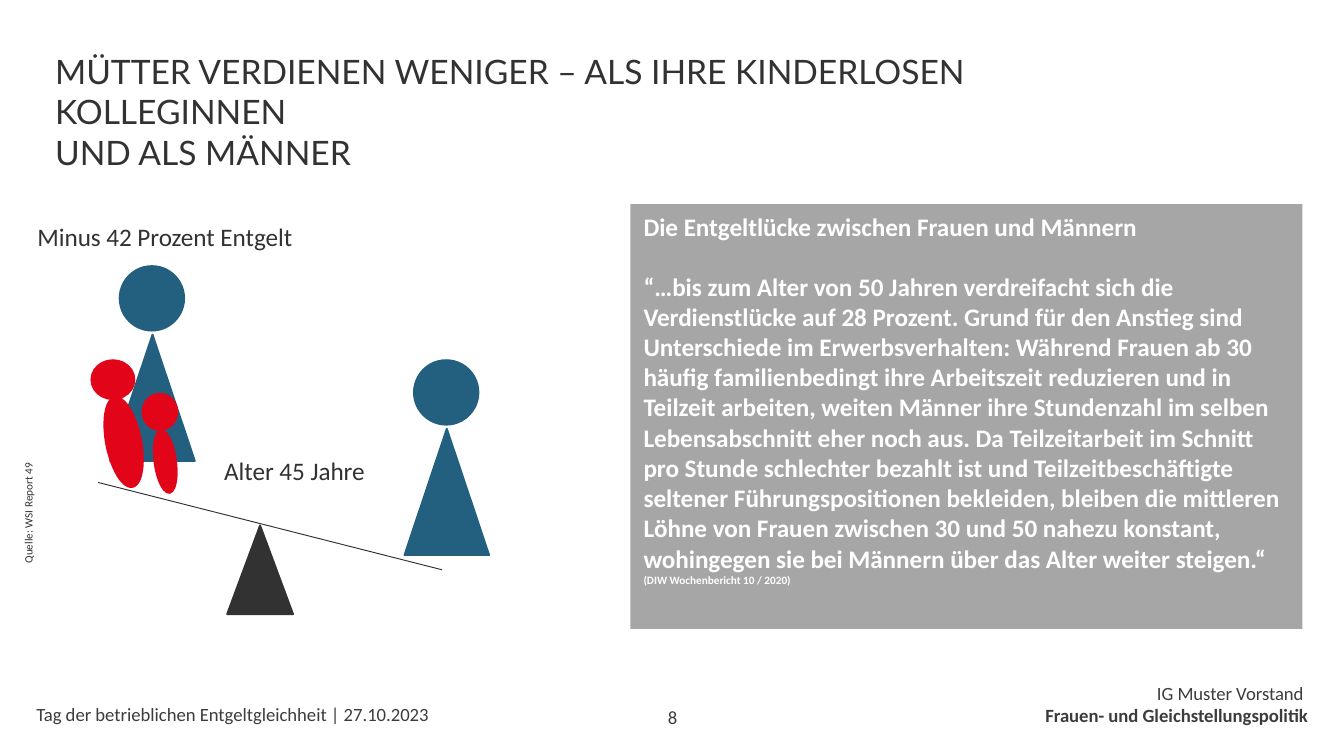
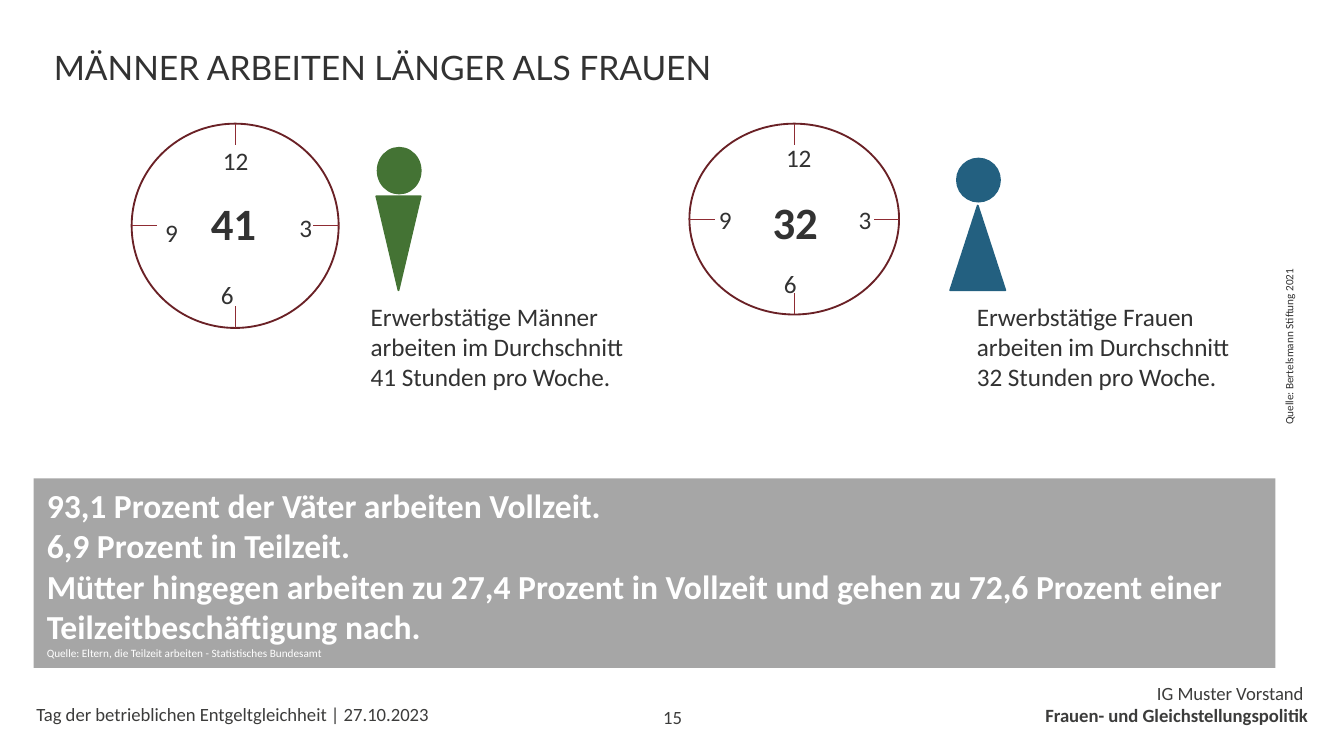
from lxml.etree import SubElement
from pptx import Presentation
from pptx.dml.color import RGBColor
from pptx.enum.shapes import MSO_CONNECTOR, MSO_SHAPE
from pptx.enum.text import MSO_ANCHOR, MSO_AUTO_SIZE, PP_ALIGN
from pptx.oxml.ns import qn
from pptx.util import Inches, Pt

COLORS = {
    "text": "323232", "footer": "3C3C3B", "white": "FFFFFF", "panel": "A6A6A6",
    "blue": "236080", "red": "E2051A", "green": "447334",
    "clock": "6A2126", "tick": "8F2C33",
}
LEFT, CENTER, RIGHT = PP_ALIGN.LEFT, PP_ALIGN.CENTER, PP_ALIGN.RIGHT
TOP, BOTTOM = MSO_ANCHOR.TOP, MSO_ANCHOR.BOTTOM
OVAL, TRIANGLE, RECT = MSO_SHAPE.OVAL, MSO_SHAPE.ISOSCELES_TRIANGLE, MSO_SHAPE.RECTANGLE

FOOTER_LEFT = ["Tag der betrieblichen Entgeltgleichheit | 27.10.2023"]
FOOTER_RIGHT = ["IG Muster Vorstand ", ("Frauen- und Gleichstellungspolitik", {"bold": True})]

PAY_TITLE = ["MÜTTER VERDIENEN WENIGER – ALS IHRE KINDERLOSEN KOLLEGINNEN", "UND ALS MÄNNER"]
PAY_PANEL = [
    "Die Entgeltlücke zwischen Frauen und Männern",
    ("“…bis zum Alter von 50 Jahren verdreifacht sich die Verdienstlücke auf 28 Prozent. "
     "Grund für den Anstieg sind Unterschiede im Erwerbsverhalten: Während Frauen ab 30 "
     "häufig familienbedingt ihre Arbeitszeit reduzieren und in Teilzeit arbeiten, weiten "
     "Männer ihre Stundenzahl im selben Lebensabschnitt eher noch aus. Da Teilzeitarbeit im "
     "Schnitt pro Stunde schlechter bezahlt ist und Teilzeitbeschäftigte seltener "
     "Führungspositionen bekleiden, bleiben die mittleren Löhne von Frauen zwischen 30 und 50 "
     "nahezu konstant, wohingegen sie bei Männern über das Alter weiter steigen.“",
     {"before": 16}),
    ("(DIW Wochenbericht 10 / 2020)", {"size": 6}),
]
PAY_LABELS = [
    ("Minus 42 Prozent Entgelt", (0.18, 1.6, 2.28, 0.33)),
    ("Alter 45 Jahre", (1.57, 3.34, 1.56, 0.33)),
]
MOTHER = [
    (OVAL, (0.89, 1.98, 0.48, 0.48), "blue", 0),
    (TRIANGLE, (0.82, 2.49, 0.63, 0.94), "blue", 0),
]
CHILDREN = [
    (OVAL, (1.06, 2.93, 0.26, 0.27), "red", 0),
    (OVAL, (1.15, 3.2, 0.16, 0.47), "red", 352.2),
    (OVAL, (0.68, 2.68, 0.32, 0.29), "red", 0),
    (OVAL, (0.79, 2.95, 0.26, 0.68), "red", 348.8),
]
COLLEAGUE_OFFSET = (2.19, 0.7)
SEESAW_BEAM = (0.73, 3.59, 3.29, 4.24)
SEESAW_BASE = (TRIANGLE, (1.69, 3.91, 0.49, 0.66), "text", 0)

HOURS_TITLE = ["MÄNNER ARBEITEN LÄNGER ALS FRAUEN"]
HOURS_PANEL = [
    "93,1 Prozent der Väter arbeiten Vollzeit.",
    "6,9 Prozent in Teilzeit.",
    "Mütter hingegen arbeiten zu 27,4 Prozent in Vollzeit und gehen zu 72,6 Prozent einer "
    "Teilzeitbeschäftigung nach.",
    ("Quelle: Eltern, die Teilzeit arbeiten - Statistisches Bundesamt",
     {"size": 6, "bold": False}),
]
WORKERS = [
    {
        "group": "Männer", "hours": "41", "caption_left": 2.66,
        "dial": (0.98, 0.92, 1.54, 1.52),
        "hours_box": (1.47, 1.41, 0.61, 0.5),
        "digits": {"12": (1.56, 1.03, 0.41, 0.33), "3": (2.13, 1.53, 0.25, 0.25),
                   "6": (1.64, 2.03, 0.1, 0.33), "9": (1.13, 1.57, 0.38, 0.25)},
        "figure": [(OVAL, (2.81, 1.1, 0.32, 0.34), "green", 0),
                   (TRIANGLE, (2.8, 1.46, 0.33, 0.7), "green", 180)],
    },
    {
        "group": "Frauen", "hours": "32", "caption_left": 7.17,
        "dial": (5.13, 0.92, 1.56, 1.42),
        "hours_box": (5.65, 1.4, 0.8, 0.5),
        "digits": {"12": (5.75, 1.01, 0.45, 0.33), "3": (6.29, 1.47, 0.27, 0.33),
                   "6": (5.8, 1.95, 0.16, 0.24), "9": (5.25, 1.47, 0.32, 0.33)},
        "figure": [(OVAL, (7.12, 1.18, 0.32, 0.32), "blue", 0),
                   (TRIANGLE, (7.07, 1.53, 0.41, 0.63), "blue", 0)],
    },
]
TICK_X, TICK_Y = 0.19, 0.16


def rgb(name):
    return RGBColor.from_string(COLORS[name])


def write(tf, paras, size=13.5, color="text", font="Calibri", bold=False,
          align=LEFT, anchor=TOP, inset=(0.1, 0.05)):
    tf.word_wrap = True
    tf.auto_size = MSO_AUTO_SIZE.NONE
    tf.vertical_anchor = anchor
    tf.margin_left = tf.margin_right = Inches(inset[0])
    tf.margin_top = tf.margin_bottom = Inches(inset[1])
    for i, para in enumerate(paras):
        text, own = (para, {}) if isinstance(para, str) else para
        p = tf.add_paragraph() if i else tf.paragraphs[0]
        p.alignment = align
        p.space_before = Pt(own.get("before", 0))
        r = p.add_run()
        r.text = text
        r.font.name = font
        r.font.size = Pt(own.get("size", size))
        r.font.bold = own.get("bold", bold)
        r.font.color.rgb = rgb(color)


def add_text(shapes, paras, box, rotation=0, **fmt):
    sp = shapes.add_textbox(*map(Inches, box))
    sp.rotation = rotation
    write(sp.text_frame, paras, **fmt)


def add_shape(shapes, kind, box, fill, rotation=0, line=None):
    sp = shapes.add_shape(kind, *map(Inches, box))
    sp.shadow.inherit = False
    sp.rotation = rotation
    sp.fill.solid()
    sp.fill.fore_color.rgb = rgb(fill)
    if line:
        sp.line.color.rgb = rgb(line)
        sp.line.width = Pt(1)
    else:
        sp.line.fill.background()
    return sp


def add_figure(shapes, parts, dx=0, dy=0):
    for kind, (x, y, w, h), color, rotation in parts:
        add_shape(shapes, kind, (x + dx, y + dy, w, h), color, rotation, line=color)


def add_line(shapes, ends, color):
    cn = shapes.add_connector(MSO_CONNECTOR.STRAIGHT, *map(Inches, ends))
    cn.line.color.rgb = rgb(color)
    cn.line.width = Pt(0.5)
    SubElement(cn._element.spPr, qn("a:effectLst"))


def add_panel(s, paras, box, size):
    sp = add_shape(s.shapes, RECT, box, "panel")
    write(sp.text_frame, paras, size=size, color="white", bold=True)


def add_source(s, text, box):
    add_text(s.shapes, [text], box, rotation=270, size=6)


def add_clock(shapes, worker):
    x, y, w, h = worker["dial"]
    cx, cy = x + w / 2, y + h / 2
    add_shape(shapes, OVAL, worker["dial"], "white", line="clock")
    for ends in [(cx, y, cx, y + TICK_Y), (cx, y + h - TICK_Y, cx, y + h),
                 (x, cy, x + TICK_X, cy), (x + w, cy, x + w - TICK_X, cy)]:
        add_line(shapes, ends, "tick")
    for digit, box in worker["digits"].items():
        narrow = {"inset": (0, 0.05), "align": CENTER} if digit == "6" else {}
        add_text(shapes, [digit], box, **narrow)
    add_text(shapes, [worker["hours"]], worker["hours_box"], size=24, bold=True)


def new_slide(prs, title, box, number):
    s = prs.slides.add_slide(prs.slide_layouts[5])
    sp = s.shapes.title
    sp.left, sp.top, sp.width, sp.height = map(Inches, box)
    write(sp.text_frame, title, size=18, font="Lato")
    footer = {"size": 10, "color": "footer", "inset": (0, 0)}
    add_text(s.shapes, FOOTER_LEFT, (0.27, 5.23, 3.89, 0.17), anchor=BOTTOM, **footer)
    add_text(s.shapes, FOOTER_RIGHT, (6.69, 5.07, 3.04, 0.34), align=RIGHT, **footer)
    add_text(s.shapes, [str(number)], (4.52, 5.12, 0.97, 0.3),
             align=CENTER, anchor=BOTTOM, **footer)
    return s


def build_pay_slide(prs):
    s = new_slide(prs, PAY_TITLE, (0.31, 0.33, 8.61, 0.71), 8)
    add_panel(s, PAY_PANEL, (4.69, 1.52, 5, 3.16), 13.5)
    add_source(s, "Quelle: WSI Report 49", (-0.35, 3.63, 1.12, 0.2))
    seesaw = s.shapes.add_group_shape().shapes
    add_figure(seesaw, MOTHER + CHILDREN)
    add_line(seesaw, SEESAW_BEAM, "text")
    add_figure(seesaw, [SEESAW_BASE])
    add_figure(seesaw, MOTHER, *COLLEAGUE_OFFSET)
    for text, box in PAY_LABELS:
        add_text(s.shapes, [text], box)


def build_hours_slide(prs):
    s = new_slide(prs, HOURS_TITLE, (0.3, 0.3, 6.91, 0.4), 15)
    for worker in WORKERS:
        add_figure(s.shapes.add_group_shape().shapes, worker["figure"])
        add_clock(s.shapes.add_group_shape().shapes, worker)
        caption = (f"Erwerbstätige {worker['group']} arbeiten im Durchschnitt "
                   f"{worker['hours']} Stunden pro Woche.")
        add_text(s.shapes, [caption], (worker["caption_left"], 2.19, 2.15, 1.01))
    add_panel(s, HOURS_PANEL, (0.25, 3.56, 9.24, 1.41), 18)
    add_source(s, "Quelle: Bertelsmann Stiftung 2021", (8.77, 2.34, 1.64, 0.2))


def main():
    prs = Presentation()
    prs.slide_width = Inches(10)
    prs.slide_height = Inches(10 * 9 / 16)
    build_pay_slide(prs)
    build_hours_slide(prs)
    prs.save("out.pptx")


if __name__ == "__main__":
    main()
